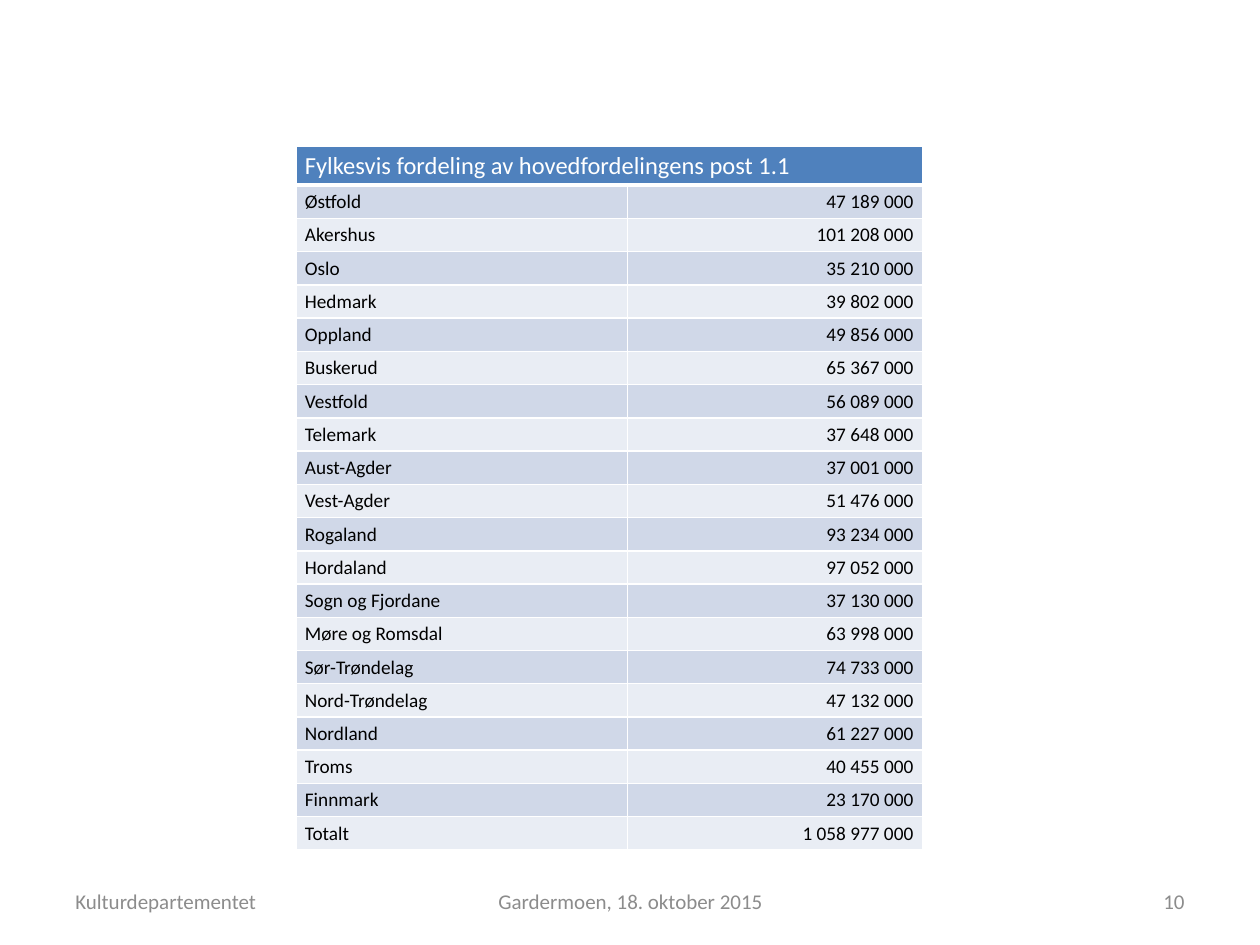
from typing import NamedTuple

from lxml import etree
from pptx import Presentation
from pptx.dml.color import RGBColor
from pptx.enum.text import MSO_ANCHOR, PP_ALIGN
from pptx.oxml.ns import qn
from pptx.util import Inches, Pt

LEFT, CENTER, RIGHT = PP_ALIGN.LEFT, PP_ALIGN.CENTER, PP_ALIGN.RIGHT
MIDDLE = MSO_ANCHOR.MIDDLE
FONT = "Calibri"
COLORS = {
    "header": "4F81BD",
    "band_dark": "D0D8E8",
    "band_light": "E9EDF4",
    "white": "FFFFFF",
    "black": "000000",
    "footer": "8C8C8C",
}
BLANK_LAYOUT = 6
TABLE_LEFT, TABLE_TOP = 2.35, 1.16
COLUMN_WIDTHS = (2.63, 2.34)
HEADER_HEIGHT, BODY_HEIGHT = 0.31, 5.28
FOOTER_TOP, FOOTER_HEIGHT = 6.95, 0.4
HEADING = "Fylkesvis fordeling av hovedfordelingens post 1.1"


class County(NamedTuple):
    name: str
    amount: str


class FooterItem(NamedTuple):
    text: str
    left: float
    width: float
    align: PP_ALIGN


COUNTIES = [
    County("Østfold", "47 189 000"),
    County("Akershus", "101 208 000"),
    County("Oslo", "35 210 000"),
    County("Hedmark", "39 802 000"),
    County("Oppland", "49 856 000"),
    County("Buskerud", "65 367 000"),
    County("Vestfold", "56 089 000"),
    County("Telemark", "37 648 000"),
    County("Aust-Agder", "37 001 000"),
    County("Vest-Agder", "51 476 000"),
    County("Rogaland", "93 234 000"),
    County("Hordaland", "97 052 000"),
    County("Sogn og Fjordane", "37 130 000"),
    County("Møre og Romsdal", "63 998 000"),
    County("Sør-Trøndelag", "74 733 000"),
    County("Nord-Trøndelag", "47 132 000"),
    County("Nordland", "61 227 000"),
    County("Troms", "40 455 000"),
    County("Finnmark", "23 170 000"),
    County("Totalt", "1 058 977 000"),
]
FOOTER = [
    FooterItem("Kulturdepartementet", 0.5, 2.33, LEFT),
    FooterItem("Gardermoen, 18. oktober 2015", 3.42, 3.17, CENTER),
    FooterItem("10", 7.17, 2.33, RIGHT),
]


def write_text(frame, text: str, *, size: float, color: str, align=LEFT) -> None:
    paragraph = frame.paragraphs[0]
    paragraph.alignment = align
    run = paragraph.add_run()
    run.text = text
    run.font.name = FONT
    run.font.size = Pt(size)
    run.font.color.rgb = RGBColor.from_string(COLORS[color])


def style_cell(cell, fill: str, bottom_border: float = 1) -> None:
    """Set insets, white borders (widths in points) and fill."""
    cell.margin_left = cell.margin_right = Inches(0.07)
    cell.margin_top, cell.margin_bottom = Inches(0.04), Inches(0.03)
    properties = cell._tc.get_or_add_tcPr()
    for side, width in (("L", 1), ("R", 1), ("T", 1), ("B", bottom_border)):
        line = etree.SubElement(properties, qn(f"a:ln{side}"), w=str(Pt(width)))
        solid = etree.SubElement(line, qn("a:solidFill"))
        etree.SubElement(solid, qn("a:srgbClr"), val=COLORS["white"])
    cell.fill.solid()
    cell.fill.fore_color.rgb = RGBColor.from_string(COLORS[fill])


def add_county_table(slide, counties: list[County]) -> None:
    table = slide.shapes.add_table(
        len(counties) + 1, len(COLUMN_WIDTHS),
        Inches(TABLE_LEFT), Inches(TABLE_TOP),
        Inches(sum(COLUMN_WIDTHS)), Inches(HEADER_HEIGHT + BODY_HEIGHT),
    ).table
    for column, width in zip(table.columns, COLUMN_WIDTHS):
        column.width = Inches(width)

    table.rows[0].height = Inches(HEADER_HEIGHT)
    for cell in table.rows[0].cells:
        style_cell(cell, "header", bottom_border=3)
    heading = table.cell(0, 0)
    heading.merge(table.cell(0, 1))
    write_text(heading.text_frame, HEADING, size=14, color="white")
    heading.text_frame.paragraphs[0].runs[0].font.bold = False

    for index, county in enumerate(counties, start=1):
        row = table.rows[index]
        row.height = Inches(BODY_HEIGHT / len(counties))
        band = "band_dark" if index % 2 else "band_light"
        for cell, text, align in zip(row.cells, county, (LEFT, RIGHT)):
            style_cell(cell, band)
            write_text(cell.text_frame, text, size=11, color="black", align=align)


def add_footer_item(slide, item: FooterItem) -> None:
    frame = slide.shapes.add_textbox(
        Inches(item.left), Inches(FOOTER_TOP), Inches(item.width), Inches(FOOTER_HEIGHT)
    ).text_frame
    frame.word_wrap = True
    frame.vertical_anchor = MIDDLE
    write_text(frame, item.text, size=12, color="footer", align=item.align)


def main() -> None:
    presentation = Presentation()
    presentation.slide_width, presentation.slide_height = Inches(10), Inches(7.5)
    slide = presentation.slides.add_slide(presentation.slide_layouts[BLANK_LAYOUT])
    add_county_table(slide, COUNTIES)
    for item in FOOTER:
        add_footer_item(slide, item)
    presentation.save("out.pptx")


if __name__ == "__main__":
    main()
